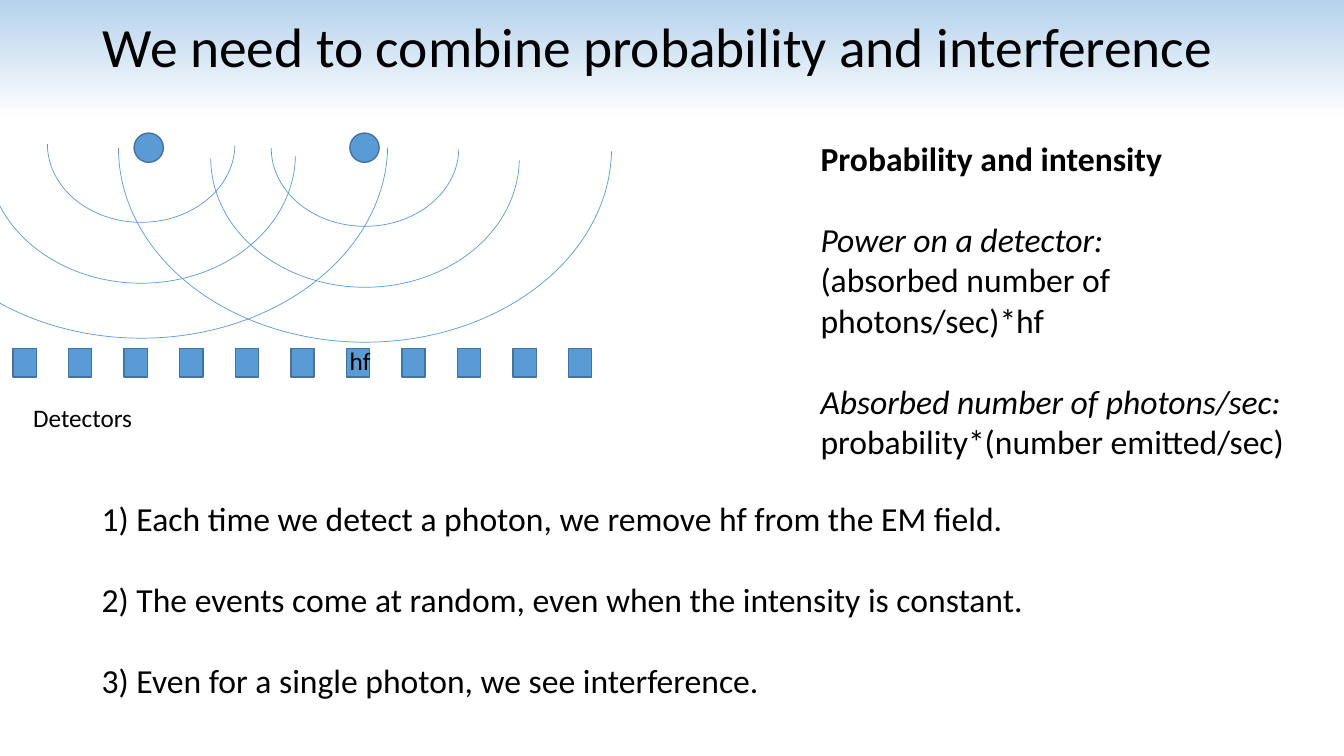
import pptx
import pptx.util
import pptx.dml.color
import pptx.enum.shapes
import pptx.enum.text

Inches = pptx.util.Inches
Pt = pptx.util.Pt
SHAPE = pptx.enum.shapes.MSO_SHAPE
ANCHOR = pptx.enum.text.MSO_ANCHOR
ALIGN = pptx.enum.text.PP_ALIGN
AUTO_SIZE = pptx.enum.text.MSO_AUTO_SIZE

BLUE, EDGE, BLACK = "5B9BD5", "43739E", "000000"
BACKGROUND = [(0, "B5D2EC"), (0.16, "FFFFFF")]
BLANK_LINE = 29

TITLE = "We need to combine probability and interference"
# Each line: wording, points of space before it, font formats
FINDINGS = [
    ("1) Each time we detect a photon, we remove hf from the EM field.", 0, {}),
    ("2) The events come at random, even when the intensity is constant.", BLANK_LINE, {}),
    ("3) Even for a single photon, we see interference.", BLANK_LINE, {}),
]
INTENSITY = [
    ("Probability and intensity", 0, {"bold": True}),
    ("Power on a detector:", BLANK_LINE, {"italic": True}),
    ("(absorbed number of photons/sec)*hf", 0, {}),
    ("Absorbed number of photons/sec:", BLANK_LINE, {"italic": True}),
    ("probability*(number emitted/sec)", 0, {}),
]
# Each text: lines, place, size, wrap
TEXTS = [
    ([("Detectors", 0, {})], (0.23, 3.94, 1.19, 0.4), 18, False),
    (FINDINGS, (0.91, 4.89, 9.35, 2.52), 24, False),
    ([("hf", 0, {})], (3.37, 3.38, 0.41, 0.4), 18, False),
    (INTENSITY, (8.04, 1.32, 5.16, 3.33), 24, True),
]

SOURCE_LEFTS = [1.33, 3.47]
SOURCE_TOP, SOURCE_SIZE = 1.32, 0.29
WAVE_CENTRES = [(3.62, 1.47), (1.4, 1.43)]
# Each wave: width, height, drop of its centre
WAVES = [(1.86, 1.55, 0), (3.06, 2.56, 0.1), (4.89, 3.85, 0)]
WAVE_START = 108.46
DETECTOR_COUNT, DETECTOR_PITCH = 11, 0.551
DETECTOR = (0.13, 3.46, 0.23, 0.28)


def colour(code):
    """Turn a hex string into a colour."""
    return pptx.dml.color.RGBColor.from_string(code)


def set_all(target, formats):
    """Set every attribute named in a dict."""
    for name, value in formats.items():
        setattr(target, name, value)


def place(shape, left, top, width, height):
    """Move and size a shape, in inches."""
    set_all(shape, {"left": Inches(left), "top": Inches(top),
                    "width": Inches(width), "height": Inches(height)})


def add_figure(page, kind, area, line, weight, fill=None):
    """Add a preset shape with a plain fill and line."""
    shape = page.shapes.add_shape(kind, *map(Inches, area))
    shape.shadow.inherit = False
    if fill:
        shape.fill.solid()
        shape.fill.fore_color.rgb = colour(fill)
    else:
        shape.fill.background()
    shape.line.color.rgb = colour(line)
    shape.line.width = Pt(weight)
    return shape


def style(span, size, formats):
    """Format one run of text."""
    set_all(span.font, {"name": "Calibri", "size": Pt(size), **formats})
    span.font.color.rgb = colour(BLACK)


def write(frame, lines, size):
    """Write one paragraph per line."""
    for index, (wording, space, formats) in enumerate(lines):
        para = frame.add_paragraph() if index else frame.paragraphs[0]
        set_all(para, {"space_before": Pt(space), "alignment": ALIGN.LEFT})
        span = para.add_run()
        span.text = wording
        style(span, size, formats)


def paint_background(page):
    """Fill the page with the downward gradient."""
    fill = page.background.fill
    fill.gradient()
    fill.gradient_angle = 270
    for stop, (position, code) in zip(fill.gradient_stops, BACKGROUND):
        stop.position = position
        stop.color.rgb = colour(code)


def add_title(page):
    """Place and write the title."""
    title = page.shapes.title
    place(title, 0.92, 0.09, 11.5, 0.81)
    set_all(title.text_frame, {"vertical_anchor": ANCHOR.MIDDLE, "word_wrap": True,
                               "auto_size": AUTO_SIZE.NONE})
    write(title.text_frame, [(TITLE, 0, {})], 39.6)
    title.text_frame.paragraphs[0].line_spacing = 0.9


def add_interference(page):
    """Draw the sources, their waves and the row of detectors."""
    for left in SOURCE_LEFTS:
        area = (left, SOURCE_TOP, SOURCE_SIZE, SOURCE_SIZE)
        add_figure(page, SHAPE.OVAL, area, EDGE, 1, BLUE)
    for centre_x, centre_y in WAVE_CENTRES:
        for width, height, drop in WAVES:
            area = (centre_x - width / 2, centre_y + drop - height / 2, width, height)
            wave = add_figure(page, SHAPE.ARC, area, BLUE, 0.5)
            wave.rotation = 180
            wave.adjustments[0] = WAVE_START
            wave.adjustments[1] = 0
    left, top, width, height = DETECTOR
    for index in range(DETECTOR_COUNT):
        area = (left + index * DETECTOR_PITCH, top, width, height)
        add_figure(page, SHAPE.RECTANGLE, area, EDGE, 1, BLUE)


def add_texts(page):
    """Add the text boxes."""
    for lines, area, size, wrap in TEXTS:
        box = page.shapes.add_textbox(*map(Inches, area))
        set_all(box.text_frame, {"word_wrap": wrap,
                                 "auto_size": AUTO_SIZE.SHAPE_TO_FIT_TEXT})
        write(box.text_frame, lines, size)


deck = pptx.Presentation()
set_all(deck, {"slide_width": Inches(13.33), "slide_height": Inches(7.5)})
page = deck.slides.add_slide(deck.slide_layouts[5])
paint_background(page)
add_title(page)
add_interference(page)
add_texts(page)
deck.save("out.pptx")
